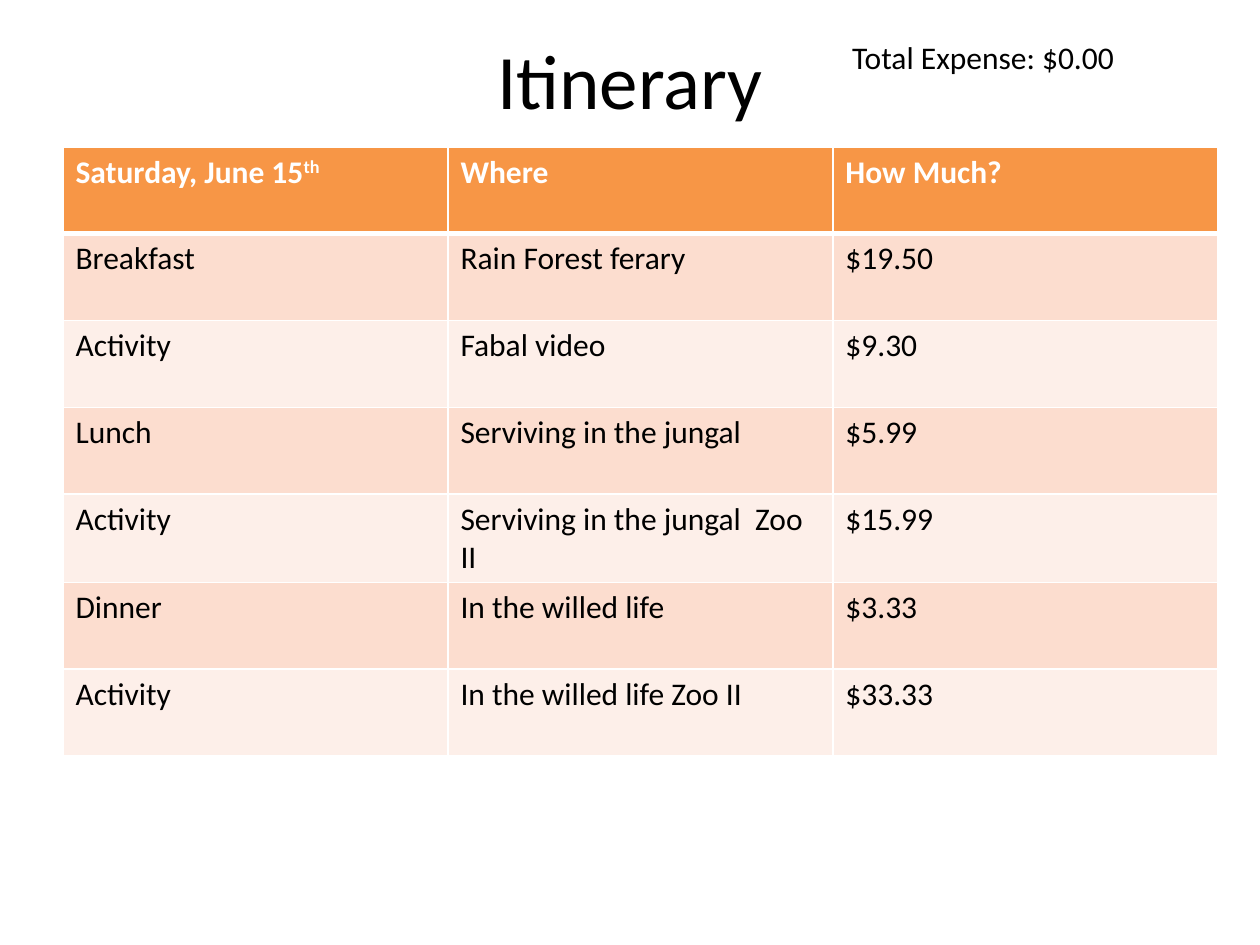
from lxml import etree
from pptx import Presentation
from pptx.dml.color import RGBColor
from pptx.enum.text import MSO_ANCHOR, PP_ALIGN
from pptx.oxml.ns import qn
from pptx.util import Cm, Pt

CENTER, MIDDLE = PP_ALIGN.CENTER, MSO_ANCHOR.MIDDLE

# Content
TITLE = "Itinerary"
TOTAL = "Total Expense: $0.00"
HEADER = ("Saturday, June 15", "Where", "How Much?")
ORDINAL = "th"
ROWS = [
    ("Breakfast", "Rain Forest ferary", "$19.50"),
    ("Activity", "Fabal video", "$9.30"),
    ("Lunch", "Serviving in the jungal", "$5.99"),
    ("Activity", "Serviving in the jungal  Zoo II", "$15.99"),
    ("Dinner", "In the willed life", "$3.33"),
    ("Activity", "In the willed life Zoo II", "$33.33"),
]

# Theme
THEME = {
    "font": "Calibri", "title_size": 44, "text_size": 18,
    "text": "000000", "header_text": "FFFFFF", "header_fill": "F79646",
    "bands": ("FCDDCF", "FDEFE9"), "border": "FFFFFF",
    "thin": 1, "thick": 3,
}


def format_runs(p, size, color, bold=False):
    for r in p.runs:
        r.font.name = THEME["font"]
        r.font.size = Pt(size)
        r.font.bold = bold
        r.font.color.rgb = RGBColor.from_string(color)


def set_borders(cell, top, bottom):
    tc_pr = cell._tc.get_or_add_tcPr()
    thin = THEME["thin"]
    for side, width in (("L", thin), ("R", thin), ("T", top), ("B", bottom)):
        ln = etree.SubElement(tc_pr, qn(f"a:ln{side}"), w=str(Pt(width)))
        fill = etree.SubElement(ln, qn("a:solidFill"))
        etree.SubElement(fill, qn("a:srgbClr"), val=THEME["border"])


prs = Presentation()
prs.slide_width, prs.slide_height = Cm(25.4), Cm(19.05)
s = prs.slides.add_slide(prs.slide_layouts[5])

# Title
title = s.shapes.title
title.left, title.top, title.width, title.height = Cm(1.27), Cm(0), Cm(22.86), Cm(3.18)
tf = title.text_frame
tf.text = TITLE
tf.vertical_anchor = MIDDLE
tf.paragraphs[0].alignment = CENTER
format_runs(tf.paragraphs[0], THEME["title_size"], THEME["text"])

# Total expense
tf = s.shapes.add_textbox(Cm(16.93), Cm(0.64), Cm(7.83), Cm(1.03)).text_frame
tf.word_wrap = True
tf.text = TOTAL
format_runs(tf.paragraphs[0], THEME["text_size"], THEME["text"])

# Itinerary table
grid = [HEADER, *ROWS]
col_w, row_h = Cm(7.76), Cm(1.75)
table = s.shapes.add_table(len(grid), len(HEADER), Cm(1.27), Cm(2.96),
                           col_w * len(HEADER), row_h * len(grid)).table
for col in table.columns:
    col.width = col_w
for i, texts in enumerate(grid):
    table.rows[i].height = row_h
    is_header = i == 0
    fill = THEME["header_fill"] if is_header else THEME["bands"][(i - 1) % 2]
    color = THEME["header_text"] if is_header else THEME["text"]
    top = THEME["thick"] if i == 1 else THEME["thin"]
    bottom = THEME["thick"] if is_header else THEME["thin"]
    for j, text in enumerate(texts):
        cell = table.cell(i, j)
        set_borders(cell, top, bottom)
        cell.fill.solid()
        cell.fill.fore_color.rgb = RGBColor.from_string(fill)
        p = cell.text_frame.paragraphs[0]
        p.text = text
        if is_header and j == 0:
            r = p.add_run()
            r.text = ORDINAL
            r.font._element.set("baseline", "30000")
        format_runs(p, THEME["text_size"], color, is_header)

prs.save("out.pptx")
